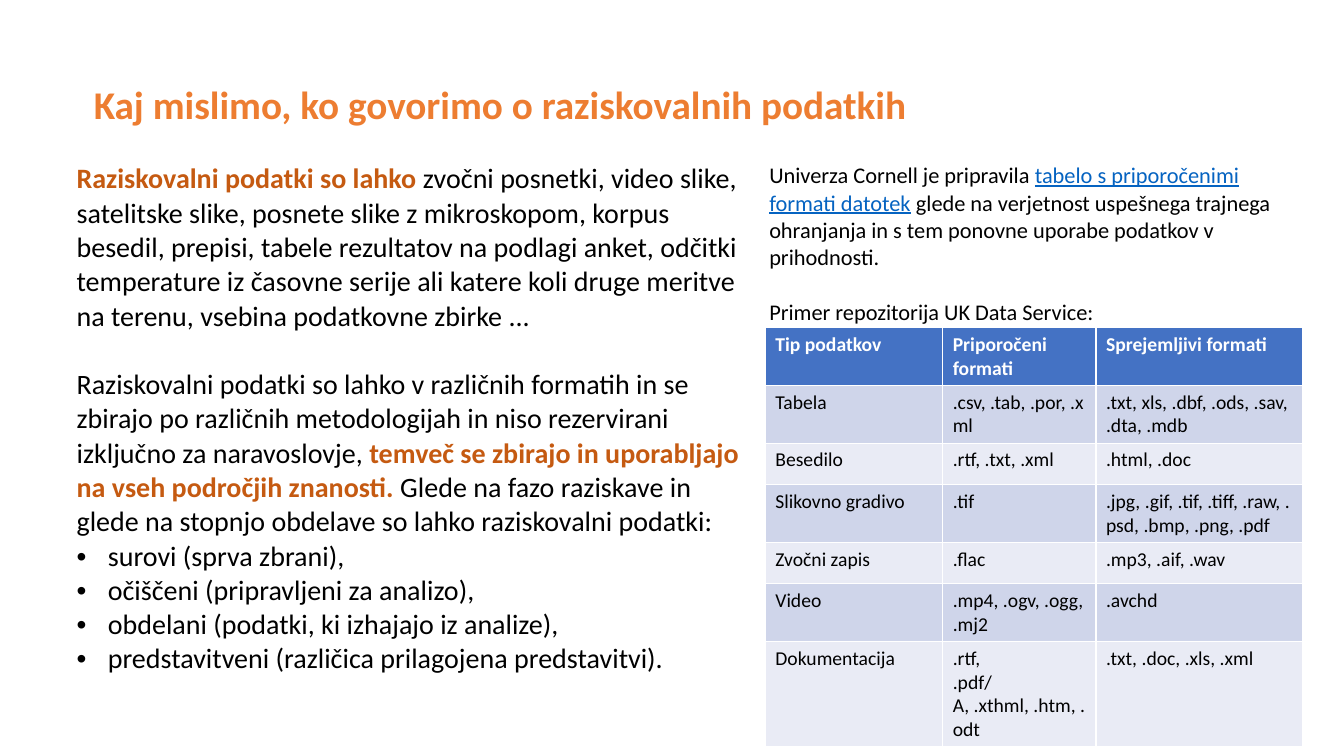
from lxml.etree import SubElement
from pptx import Presentation
from pptx.dml.color import RGBColor
from pptx.enum.text import MSO_ANCHOR, PP_ALIGN
from pptx.oxml.ns import qn
from pptx.util import Inches, Pt

FONT = "Calibri"
BLACK, WHITE, ORANGE, RUST, LINK = "000000", "FFFFFF", "ED7D31", "C55A11", "0563C1"
HEADER_FILL, BAND_FILLS = "4472C4", ("CFD5EA", "E9EBF5")

TITLE = "Kaj mislimo, ko govorimo o raziskovalnih podatkih"

# Each paragraph is a list of (text, style) spans.
DATA_KINDS = [
    [("Raziskovalni podatki so lahko ", "strong"),
     ("zvočni posnetki, video slike, satelitske slike, posnete slike z mikroskopom, "
      "korpus besedil, prepisi, tabele rezultatov na podlagi anket, odčitki temperature "
      "iz časovne serije ali katere koli druge meritve na terenu, vsebina podatkovne "
      "zbirke ...", "plain")],
    [("Raziskovalni podatki so lahko v različnih formatih in se zbirajo po različnih "
      "metodologijah in niso rezervirani izključno za naravoslovje, ", "plain"),
     ("temveč se zbirajo in uporabljajo na vseh področjih znanosti.", "strong"),
     (" Glede na fazo raziskave in glede na stopnjo obdelave so lahko raziskovalni "
      "podatki:", "plain")],
]
PROCESSING_STAGES = [
    "surovi (sprva zbrani),",
    "očiščeni (pripravljeni za analizo),",
    "obdelani (podatki, ki izhajajo iz analize),",
    "predstavitveni (različica prilagojena predstavitvi).",
]
FORMAT_ADVICE = [
    [("Univerza Cornell je pripravila ", "plain"),
     ("tabelo s priporočenimi formati datotek", "link"),
     (" glede na verjetnost uspešnega trajnega ohranjanja in s tem ponovne uporabe "
      "podatkov v prihodnosti.", "plain")],
    [("Primer repozitorija UK Data Service:", "plain")],
]
FORMATS = [
    ("Tip podatkov", "Priporočeni formati", "Sprejemljivi formati"),
    ("Tabela", ".csv, .tab, .por, .xml", ".txt, xls, .dbf, .ods, .sav,\n.dta, .mdb"),
    ("Besedilo", ".rtf, .txt, .xml", ".html, .doc"),
    ("Slikovno gradivo", ".tif", ".jpg, .gif, .tif, .tiff, .raw, .psd, .bmp, .png, .pdf"),
    ("Zvočni zapis", ".flac", ".mp3, .aif, .wav"),
    ("Video", ".mp4, .ogv, .ogg, .mj2", ".avchd"),
    ("Dokumentacija", ".rtf,\n.pdf/A, .xthml, .htm, .odt", ".txt, .doc, .xls, .xml"),
]
STYLES = {"plain": (BLACK, False, False), "strong": (RUST, True, False),
          "link": (LINK, False, True)}


def color(value):
    return RGBColor.from_string(value)


def add_span(para, text, size, tint, bold=False, underline=False):
    """Add text as runs, with a line break at each newline."""
    for index, line in enumerate(text.split("\n")):
        if index:
            para.add_line_break()
        span = para.add_run()
        span.text = line
        span.font.name, span.font.size = FONT, Pt(size)
        span.font.bold, span.font.underline = bold, underline
        span.font.color.rgb = color(tint)


def add_bullet(para):
    properties = para._p.get_or_add_pPr()
    properties.set("marL", str(Inches(0.31)))
    properties.set("indent", str(-Inches(0.31)))
    SubElement(properties, qn("a:buFont"), typeface="Arial")
    SubElement(properties, qn("a:buChar"), char="•")


def fill_prose(frame, paragraphs, size):
    """Write styled paragraphs, one line height apart."""
    for index, spans in enumerate(paragraphs):
        para = frame.add_paragraph() if index else frame.paragraphs[0]
        if index:
            para.space_before = Pt(size * 1.22)
        for text, style in spans:
            add_span(para, text, size, *STYLES[style])


def add_table(page, left, top, widths, heights):
    table = page.shapes.add_table(len(heights), len(widths), Inches(left), Inches(top),
                                  Inches(sum(widths)), Inches(sum(heights))).table
    for column, width in zip(table.columns, widths):
        column.width = Inches(width)
    for row, height in zip(table.rows, heights):
        row.height = Inches(height)
    return table


def add_title(page):
    title = page.shapes.title
    title.left, title.top = Inches(0.83), Inches(0.72)
    title.width, title.height = Inches(12.2), Inches(0.67)
    title.text_frame.vertical_anchor = MSO_ANCHOR.MIDDLE
    para = title.text_frame.paragraphs[0]
    para.alignment, para.line_spacing = PP_ALIGN.LEFT, 0.9
    add_span(para, TITLE, 28, ORANGE, bold=True)


def add_prose(page):
    table = add_table(page, 0.66, 1.56, [6.87, 5.28], [5.38])
    table.first_row = table.horz_banding = False
    kinds, advice = table.cell(0, 0), table.cell(0, 1)
    for cell in (kinds, advice):
        cell.fill.background()
    fill_prose(kinds.text_frame, DATA_KINDS, 20)
    for stage in PROCESSING_STAGES:
        para = kinds.text_frame.add_paragraph()
        add_bullet(para)
        add_span(para, stage, 20, BLACK)
    fill_prose(advice.text_frame, FORMAT_ADVICE, 16)


def add_formats(page):
    heights = [0.5] + [0.41] * (len(FORMATS) - 1)
    table = add_table(page, 7.59, 3.25, [1.76, 1.52, 2.05], heights)
    for row, texts in enumerate(FORMATS):
        header = row == 0
        for column, text in enumerate(texts):
            cell = table.cell(row, column)
            cell.fill.solid()
            cell.fill.fore_color.rgb = color(HEADER_FILL if header else BAND_FILLS[(row - 1) % 2])
            add_span(cell.text_frame.paragraphs[0], text, 14,
                     WHITE if header else BLACK, bold=header)


def main():
    deck = Presentation()
    deck.slide_width, deck.slide_height = Inches(13.33), Inches(7.5)
    page = deck.slides.add_slide(deck.slide_layouts[5])
    add_title(page)
    add_prose(page)
    add_formats(page)
    deck.save("out.pptx")


if __name__ == "__main__":
    main()
